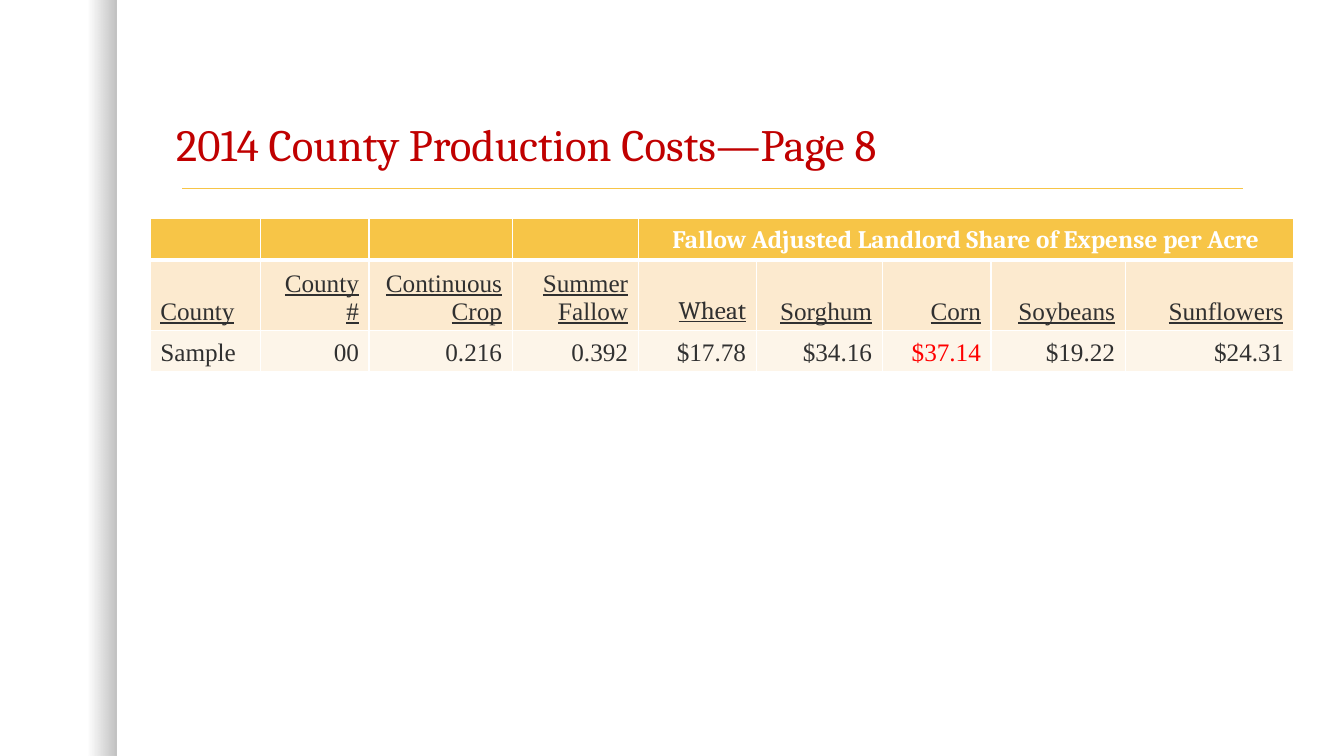
from lxml.etree import SubElement
from pptx import Presentation
from pptx.dml.color import RGBColor
from pptx.enum.shapes import MSO_CONNECTOR as Connector, MSO_SHAPE as Shape
from pptx.enum.text import MSO_ANCHOR as Anchor, PP_ALIGN as Align
from pptx.oxml.ns import qn
from pptx.util import Pt

PX = 9144
COLORS = {
    "white": "FFFFFF", "black": "000000", "gold": "F7C547", "title": "C00000",
    "cream": "FCEACF", "ivory": "FDF5E9", "ink": "303030", "alert": "FF0000",
}
SERIF, HEADING = "Times New Roman", "Cambria"
COLUMN_WIDTHS = [109, 108, 142, 125, 117, 125, 108, 133, 167]
ROW_HEIGHTS = [41, 64, 41]
BANNER = "Fallow Adjusted Landlord Share of Expense per Acre"
BANNER_COLUMN = 4
LABELS = ["County", "County #", "Continuous Crop", "Summer Fallow", "Wheat",
          "Sorghum", "Corn", "Soybeans", "Sunflowers"]
SAMPLE = ["Sample", "00", "0.216", "0.392", "$17.78", "$34.16", "$37.14",
          "$19.22", "$24.31"]


def px(*lengths):
    """Turn px lengths into EMU."""
    return [length * PX for length in lengths]


def rgb(name):
    """Look up a named colour."""
    return RGBColor.from_string(COLORS[name])


def write(frame, text, size=18, font=SERIF, color="ink", bold=False,
          underline=False, align=Align.LEFT, spacing=None):
    """Put one formatted paragraph in a text frame."""
    paragraph = frame.paragraphs[0]
    paragraph.alignment = align
    paragraph.line_spacing = spacing
    run = paragraph.add_run()
    run.text = text
    run.font.size = Pt(size)
    run.font.name = font
    run.font.color.rgb = rgb(color)
    run.font.bold = bold
    run.font.underline = underline


def add_edge_shade(slide):
    """Draw the shaded band along the left edge."""
    shade = slide.shapes.add_shape(Shape.RECTANGLE, *px(0, 0, 116, 750))
    shade.shadow.inherit = False
    shade.line.fill.background()
    shade.fill.gradient()
    shade.fill.gradient_angle = 0
    for stop, position in zip(shade.fill.gradient_stops, (0.75, 1)):
        stop.color.rgb = rgb("black")
        stop.position = position
    stop_colors = shade._element.spPr.iter(qn("a:srgbClr"))
    for stop_color, alpha in zip(list(stop_colors), (0, 25000)):
        SubElement(stop_color, qn("a:alpha"), val=str(alpha))


def add_rule(slide):
    """Draw the gold line under the title."""
    rule = slide.shapes.add_connector(Connector.STRAIGHT, *px(181, 187, 1233, 187))
    rule.line.color.rgb = rgb("gold")
    rule.line.width = Pt(1)
    SubElement(rule._element.spPr, qn("a:effectLst"))


def add_title(slide, text):
    """Add the slide title."""
    title = slide.shapes.add_textbox(*px(165, 40, 1077, 135)).text_frame
    title.word_wrap = True
    title.vertical_anchor = Anchor.BOTTOM
    write(title, text, size=32, font=HEADING, color="title", spacing=0.9)


def style_cell(cell, fill, bottom):
    """Give a cell white borders, a fill and bottom anchoring."""
    properties = cell._tc.get_or_add_tcPr()
    for side, width in (("L", 1), ("R", 1), ("T", 1), ("B", bottom)):
        border = SubElement(properties, qn(f"a:ln{side}"), w=str(Pt(width)))
        paint = SubElement(border, qn("a:solidFill"))
        SubElement(paint, qn("a:srgbClr"), val=COLORS["white"])
    cell.fill.solid()
    cell.fill.fore_color.rgb = rgb(fill)
    cell.vertical_anchor = Anchor.BOTTOM


def add_cost_table(slide):
    """Add the table of landlord expenses."""
    rows, columns = len(ROW_HEIGHTS), len(COLUMN_WIDTHS)
    size = px(sum(COLUMN_WIDTHS), sum(ROW_HEIGHTS))
    costs = slide.shapes.add_table(rows, columns, *px(149, 217), *size).table
    for column, width in zip(costs.columns, px(*COLUMN_WIDTHS)):
        column.width = width
    for row, height, fill, bottom in zip(
            costs.rows, px(*ROW_HEIGHTS), ("gold", "cream", "ivory"), (3, 1, 1)):
        row.height = height
        for cell in row.cells:
            style_cell(cell, fill, bottom)

    banner = costs.cell(0, BANNER_COLUMN)
    banner.merge(costs.cell(0, columns - 1))
    write(banner.text_frame, BANNER, font=HEADING, color="white", bold=True,
          align=Align.CENTER)
    for index, (label, value) in enumerate(zip(LABELS, SAMPLE)):
        align = Align.RIGHT if index else Align.LEFT
        write(costs.cell(1, index).text_frame, label, underline=True, align=align,
              font=HEADING if label == "Wheat" else SERIF)
        write(costs.cell(2, index).text_frame, value, align=align,
              color="alert" if label == "Corn" else "ink")


def main():
    """Build the slide and save it."""
    deck = Presentation()
    deck.slide_width, deck.slide_height = px(1333, 750)
    slide = deck.slides.add_slide(deck.slide_layouts[6])
    slide.background.fill.solid()
    slide.background.fill.fore_color.rgb = rgb("white")
    add_edge_shade(slide)
    add_rule(slide)
    add_title(slide, "2014 County Production Costs—Page 8")
    add_cost_table(slide)
    deck.save("out.pptx")


if __name__ == "__main__":
    main()
